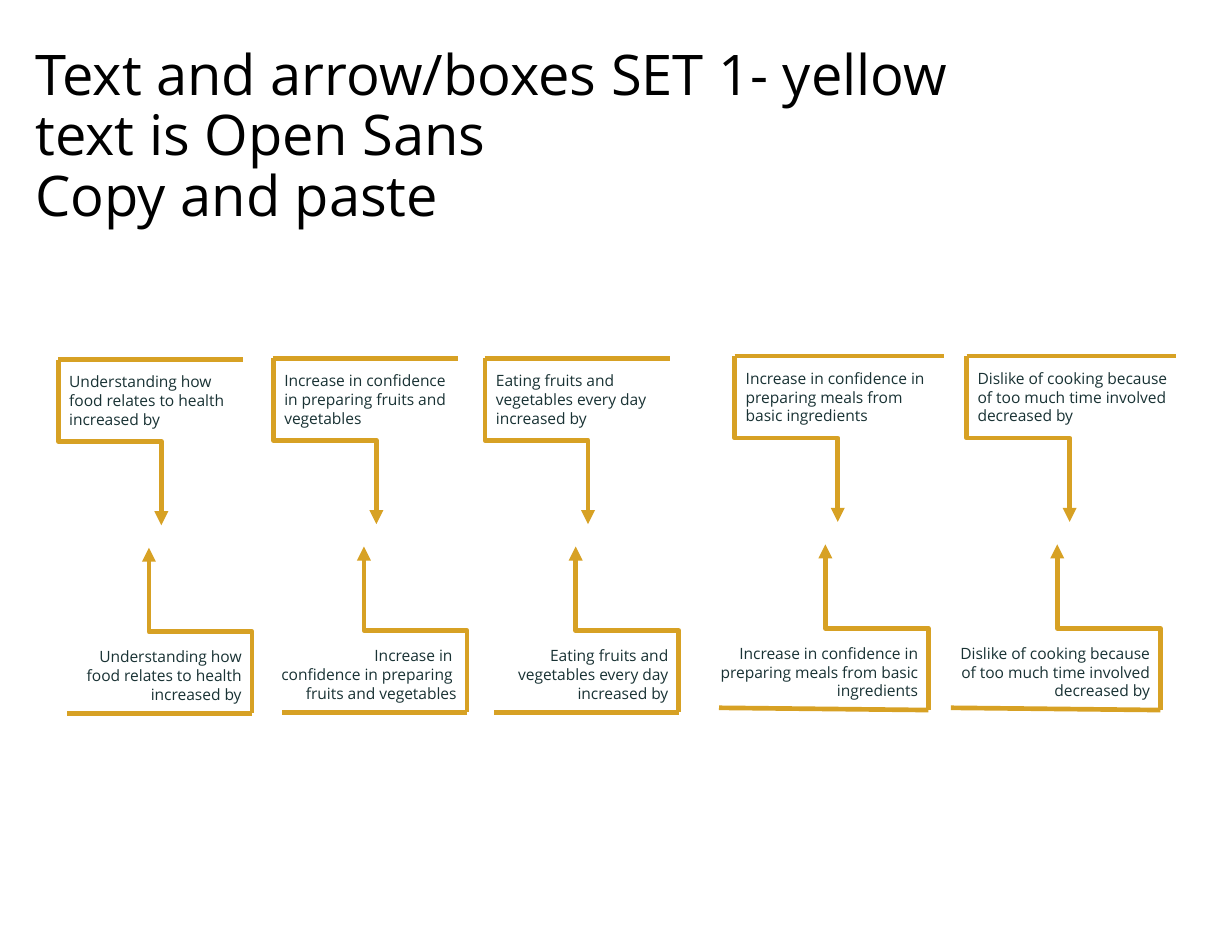
from collections import namedtuple

from lxml import etree
from pptx import Presentation
from pptx import util as u
from pptx.dml.color import RGBColor
from pptx.enum import shapes, text
from pptx.oxml.ns import qn

COLUMNS, ROWS = 110, 85
ARROW_WIDTH, ARROW_HEIGHT = 9.2, 14.8
CORNER_SHIFT, CORNER_DROP = 17.3, 31.6

Flow = namedtuple("Flow", "column row rail slope upper_width lower_width upper lower")


def color(value):
    return RGBColor.from_string(value)


def write(frame, content, font="Open Sans", size=10, fill="193234",
          align=None, spacing=None):
    frame.word_wrap = True
    for index, line in enumerate(content.split("\n")):
        paragraph = frame.paragraphs[0] if index == 0 else frame.add_paragraph()
        paragraph.text = line
        paragraph.alignment = align
        paragraph.line_spacing = spacing
        for run in paragraph.runs:
            run.font.name = font
            run.font.size = u.Pt(size)
            run.font.color.rgb = color(fill)


class Board:
    accent = "D7A124"
    line_width = 3

    def __init__(self, presentation):
        self.slide = presentation.slides.add_slide(presentation.slide_layouts[6])
        self.column = presentation.slide_width / COLUMNS
        self.row = presentation.slide_height / ROWS
        self.group = self.slide

    def start_group(self):
        self.group = self.slide.shapes.add_group_shape()

    def x(self, columns):
        return u.Emu(round(columns * self.column))

    def y(self, rows):
        return u.Emu(round(rows * self.row))

    def label(self, column, row, width, height, content, **style):
        box = self.group.shapes.add_textbox(
            self.x(column), self.y(row), self.x(width), self.y(height))
        write(box.text_frame, content, **style)

    def line(self, start, end, kind=shapes.MSO_CONNECTOR.STRAIGHT):
        connector = self.group.shapes.add_connector(
            kind, self.x(start[0]), self.y(start[1]), self.x(end[0]), self.y(end[1]))
        connector.line.color.rgb = color(self.accent)
        connector.line.width = u.Pt(self.line_width)
        etree.SubElement(connector._element.spPr, qn("a:effectLst"))
        return connector

    def bent_arrow(self, column, row, degrees):
        middle_x = column + ARROW_WIDTH / 2
        middle_y = row + ARROW_HEIGHT / 2
        start = (middle_x + ARROW_HEIGHT / 2, middle_y - ARROW_WIDTH / 2)
        end = (middle_x - ARROW_HEIGHT / 2, middle_y + ARROW_WIDTH / 2)
        arrow = self.line(start, end, shapes.MSO_CONNECTOR.ELBOW)
        properties = arrow._element.spPr
        properties.find(qn("a:xfrm")).set("rot", str(degrees * 60000))
        geometry = properties.find(qn("a:prstGeom"))
        adjustments = geometry.find(qn("a:avLst"))
        if adjustments is None:
            adjustments = etree.SubElement(geometry, qn("a:avLst"))
        etree.SubElement(adjustments, qn("a:gd"), name="adj1", fmla="val 49400")
        etree.SubElement(properties.find(qn("a:ln")), qn("a:tailEnd"), type="triangle")

    def flow(self, flow):
        left, top = flow.column, flow.row
        self.start_group()
        self.bent_arrow(left, top, 270)
        self.line((left, top), (left + flow.rail, top))
        self.label(left, top + 0.65, flow.upper_width, 6.1, flow.upper)

        right, bottom = left + CORNER_SHIFT, top + CORNER_DROP
        self.start_group()
        self.bent_arrow(right - ARROW_WIDTH, bottom - ARROW_HEIGHT, 90)
        self.line((right, bottom), (right - flow.rail, bottom - flow.slope))
        self.label(right - flow.lower_width + 0.05, top + 25.2, flow.lower_width,
                   6.1, flow.lower, align=text.PP_ALIGN.RIGHT)


HEALTH = "Understanding how food relates to health increased by"
PREPARING = "Increase in confidence in preparing fruits and vegetables"
PREPARING_LINES = "Increase in \nconfidence in preparing \nfruits and vegetables"
EATING = "Eating fruits and vegetables every day increased by"
MEALS = "Increase in confidence in preparing meals from basic ingredients"
DISLIKE = "Dislike of cooking because of too much time involved decreased by"

FLOWS = [
    Flow(5.2, 32.1, 16.5, 0, 17.3, 17.3, HEALTH, HEALTH),
    Flow(24.4, 32, 16.5, 0, 16.6, 18.3, PREPARING, PREPARING_LINES),
    Flow(43.3, 32, 16.5, 0, 18.3, 18.3, EATING, EATING),
    Flow(65.6, 31.8, 18.7, 0.2, 19.5, 19.7, MEALS, MEALS),
    Flow(86.3, 31.8, 18.7, 0.2, 19.5, 19.7, DISLIKE, DISLIKE),
]


def main():
    presentation = Presentation()
    presentation.slide_width = u.Inches(11)
    presentation.slide_height = u.Inches(8.5)
    board = Board(presentation)
    board.label(2.2, 3.7, 115, 14.5,
                "Text and arrow/boxes SET 1- yellow\vtext is Open Sans\vCopy and paste",
                size=36, fill="000000", spacing=0.9)
    for flow in FLOWS:
        board.flow(flow)
    presentation.save("out.pptx")


if __name__ == "__main__":
    main()
